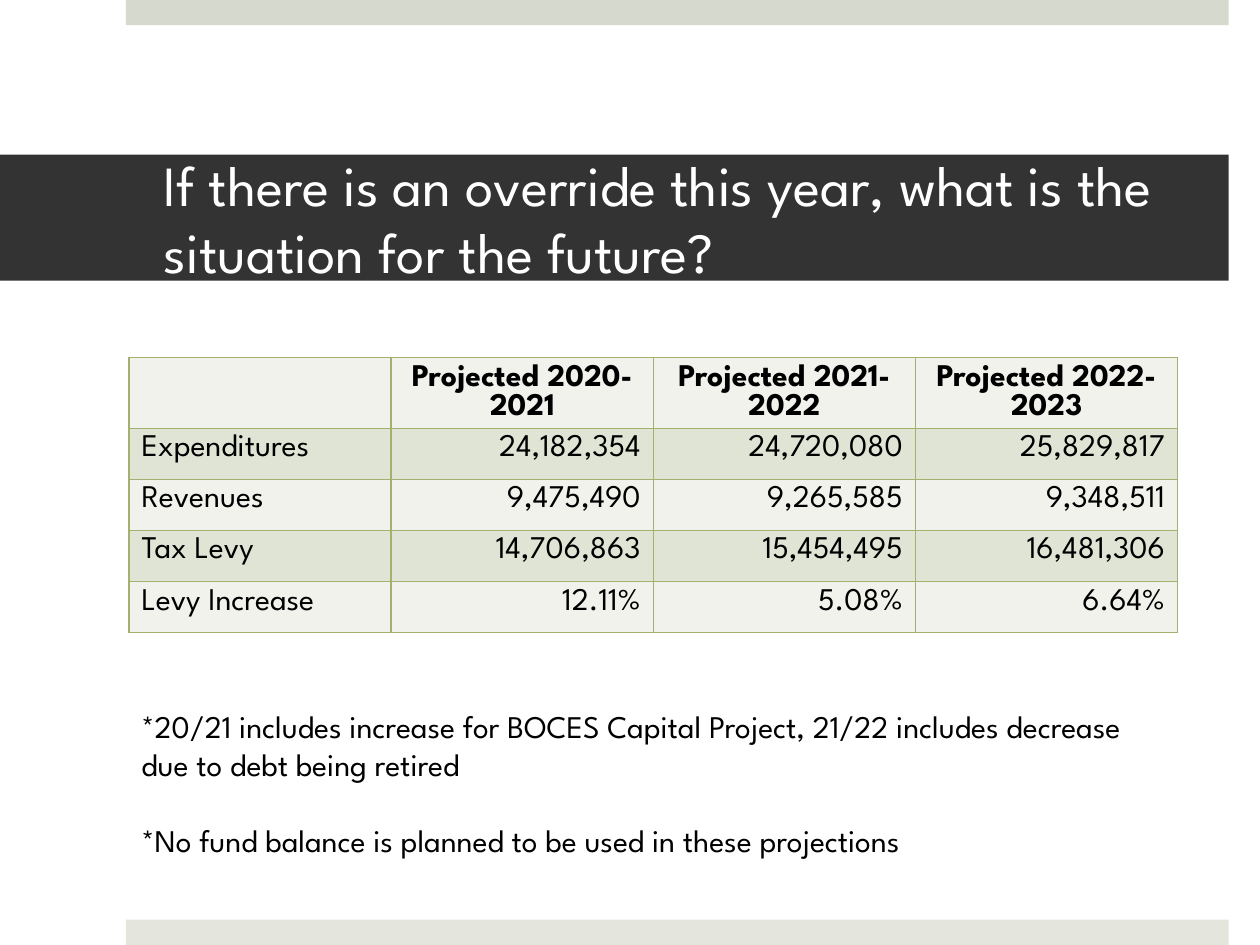
from dataclasses import dataclass

from lxml import etree
from pptx import Presentation
from pptx.dml.color import RGBColor
from pptx.enum.shapes import MSO_SHAPE
from pptx.enum.text import MSO_ANCHOR, PP_ALIGN
from pptx.oxml.ns import qn
from pptx.util import Cm, Pt

RECTANGLE = MSO_SHAPE.RECTANGLE
MIDDLE = MSO_ANCHOR.MIDDLE
LEFT, CENTER, RIGHT = PP_ALIGN.LEFT, PP_ALIGN.CENTER, PP_ALIGN.RIGHT


@dataclass(frozen=True)
class Theme:
    font: str = "League Spartan"
    title_size: float = 32.4
    title_spacing: float = 38.3
    body_size: float = 18
    body_spacing: float = 21.8
    title_band: str = "333333"
    title_text: str = "FFFFFF"
    text: str = "000000"
    top_band: str = "D6D9CD"
    bottom_band: str = "E4E6DE"
    row_fills: tuple = ("F0F2EB", "E0E4D5")
    border: str = "A2B170"
    border_width: float = 1


THEME = Theme()

TITLE = "If there is an override this year, what is the situation for the future?"
PROJECTIONS = [
    ("", "Projected 2020-2021", "Projected 2021-2022", "Projected 2022-2023"),
    ("Expenditures", "24,182,354", "24,720,080", "25,829,817"),
    ("Revenues", "9,475,490", "9,265,585", "9,348,511"),
    ("Tax Levy", "14,706,863", "15,454,495", "16,481,306"),
    ("Levy Increase", "12.11%", "5.08%", "6.64%"),
]
NOTES = [
    "*20/21 includes increase for BOCES Capital Project, 21/22 includes decrease due to debt being retired",
    "*No fund balance is planned to be used in these projections",
]

SLIDE_WIDTH, SLIDE_HEIGHT = 25.4, 19.05
BAND_LEFT, BAND_RIGHT, BAND_HEIGHT = 2.54, 24.77, 0.51
TITLE_TOP, TITLE_HEIGHT = 3.12, 2.54
CONTENT_LEFT, CONTENT_WIDTH = 2.6, 21.14
TABLE_TOP, ROW_HEIGHT = 7.21, 1.03
NOTES_TOP, NOTES_HEIGHT = 14.12, 3.33


def add_band(slide, left, top, height, color):
    shape = slide.shapes.add_shape(
        RECTANGLE, Cm(left), Cm(top), Cm(BAND_RIGHT - left), Cm(height))
    shape.shadow.inherit = False
    shape.fill.solid()
    shape.fill.fore_color.rgb = RGBColor.from_string(color)
    shape.line.fill.background()
    return shape


def write_paragraph(paragraph, text, size, color, align=LEFT, bold=False, spacing=None):
    paragraph.text = text
    paragraph.alignment = align
    if spacing:
        paragraph.line_spacing = Pt(spacing)
    for run in paragraph.runs:
        run.font.name = THEME.font
        run.font.size = Pt(size)
        run.font.bold = bold
        run.font.color.rgb = RGBColor.from_string(color)


def add_borders(cell):
    properties = cell._tc.get_or_add_tcPr()
    for position, side in enumerate(("lnL", "lnR", "lnT", "lnB")):
        line = etree.Element(qn(f"a:{side}"), w=str(Pt(THEME.border_width)))
        fill = etree.SubElement(line, qn("a:solidFill"))
        etree.SubElement(fill, qn("a:srgbClr"), val=THEME.border)
        properties.insert(position, line)


def add_title(slide):
    band = add_band(slide, 0, TITLE_TOP, TITLE_HEIGHT, THEME.title_band)
    frame = band.text_frame
    frame.word_wrap = True
    frame.vertical_anchor = MIDDLE
    frame.margin_left, frame.margin_right = Cm(3.3), Cm(0.76)
    frame.margin_top = frame.margin_bottom = Cm(0.13)
    write_paragraph(frame.paragraphs[0], TITLE, THEME.title_size,
                    THEME.title_text, spacing=THEME.title_spacing)


def add_projections(slide):
    row_count, column_count = len(PROJECTIONS), len(PROJECTIONS[0])
    table = slide.shapes.add_table(
        row_count, column_count, Cm(CONTENT_LEFT), Cm(TABLE_TOP),
        Cm(CONTENT_WIDTH), Cm(ROW_HEIGHT * row_count)).table
    for row_index, values in enumerate(PROJECTIONS):
        is_header = row_index == 0
        for column_index, value in enumerate(values):
            cell = table.cell(row_index, column_index)
            cell.fill.solid()
            cell.fill.fore_color.rgb = RGBColor.from_string(
                THEME.row_fills[row_index % 2])
            add_borders(cell)
            align = CENTER if is_header else RIGHT if column_index else LEFT
            write_paragraph(cell.text_frame.paragraphs[0], value,
                            THEME.body_size, THEME.text, align, is_header)


def add_notes(slide):
    box = slide.shapes.add_textbox(
        Cm(CONTENT_LEFT), Cm(NOTES_TOP), Cm(CONTENT_WIDTH), Cm(NOTES_HEIGHT))
    frame = box.text_frame
    frame.word_wrap = True
    frame.text = "\n".join(NOTES)
    for index, (paragraph, note) in enumerate(zip(frame.paragraphs, NOTES)):
        write_paragraph(paragraph, note, THEME.body_size, THEME.text,
                        spacing=THEME.body_spacing)
        if index:
            paragraph.space_before = Pt(THEME.body_spacing)


def main():
    presentation = Presentation()
    presentation.slide_width = Cm(SLIDE_WIDTH)
    presentation.slide_height = Cm(SLIDE_HEIGHT)
    slide = presentation.slides.add_slide(presentation.slide_layouts[6])
    add_band(slide, BAND_LEFT, 0, BAND_HEIGHT, THEME.top_band)
    add_band(slide, BAND_LEFT, SLIDE_HEIGHT - BAND_HEIGHT, BAND_HEIGHT,
             THEME.bottom_band)
    add_title(slide)
    add_projections(slide)
    add_notes(slide)
    presentation.save("out.pptx")


if __name__ == "__main__":
    main()
